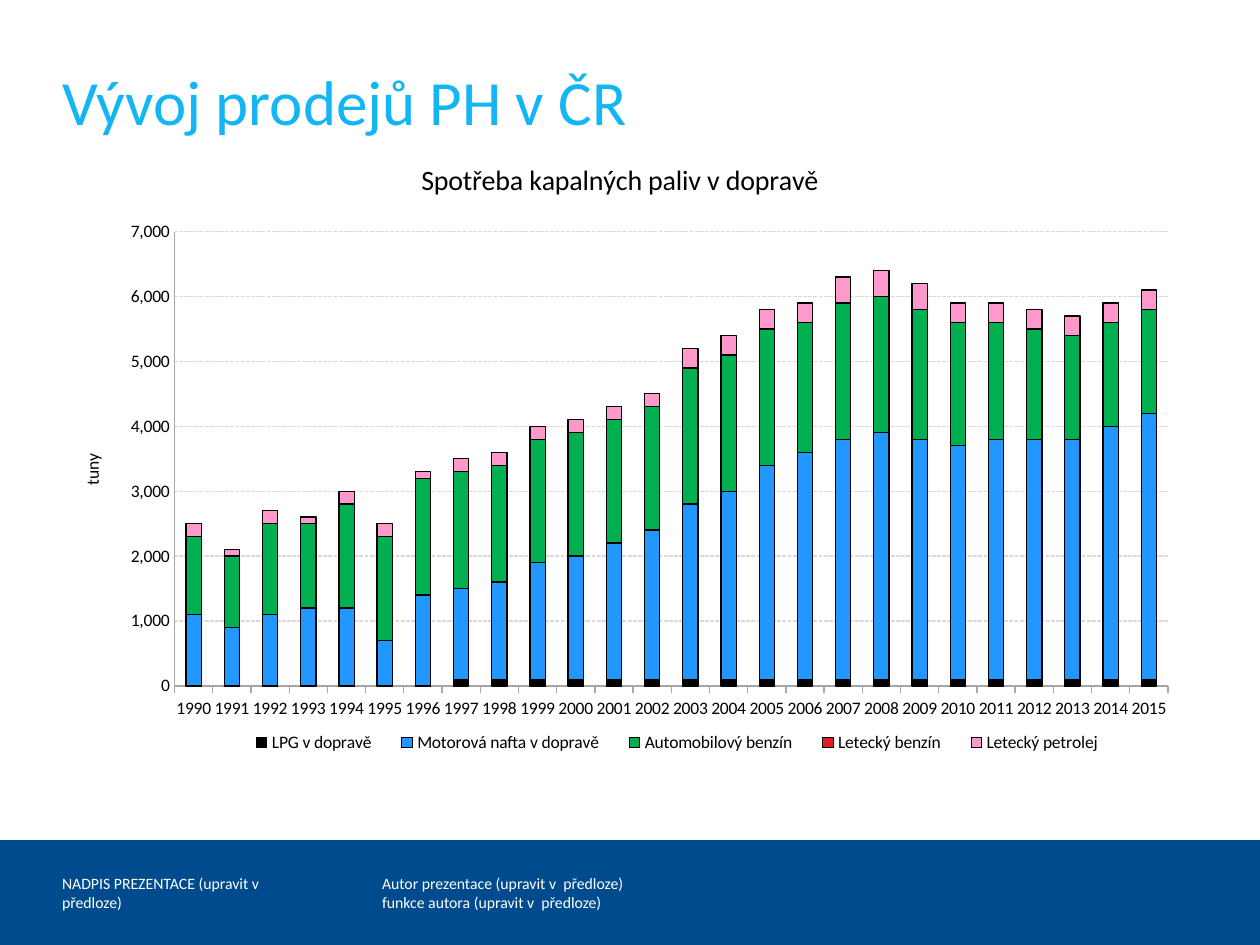
from lxml import etree
from pptx import Presentation
from pptx.chart.data import CategoryChartData
from pptx.dml.color import RGBColor
from pptx.enum.chart import XL_CHART_TYPE, XL_LEGEND_POSITION, XL_TICK_LABEL_POSITION, XL_TICK_MARK
from pptx.enum.dml import MSO_LINE
from pptx.enum.shapes import MSO_SHAPE
from pptx.enum.text import MSO_ANCHOR, MSO_AUTO_SIZE, PP_ALIGN
from pptx.oxml.ns import qn
from pptx.util import Emu, Pt

SCALE = 914400 / 126
FONT = "Calibri"
TITLE_ONLY = 5
STACKED = XL_CHART_TYPE.COLUMN_STACKED
BOTTOM = XL_LEGEND_POSITION.BOTTOM
LOW = XL_TICK_LABEL_POSITION.LOW
TICK_OUTSIDE = XL_TICK_MARK.OUTSIDE
TICK_NONE = XL_TICK_MARK.NONE
DASHED = MSO_LINE.SQUARE_DOT
RECTANGLE = MSO_SHAPE.RECTANGLE
TOP, MIDDLE = MSO_ANCHOR.TOP, MSO_ANCHOR.MIDDLE
NO_AUTOFIT = MSO_AUTO_SIZE.NONE
LEFT = PP_ALIGN.LEFT

WHITE = RGBColor(0xFF, 0xFF, 0xFF)
BLACK = RGBColor(0x00, 0x00, 0x00)
NAVY = RGBColor(0x00, 0x4B, 0x8D)
SKY = RGBColor(0x13, 0xB5, 0xF4)
BLUE = RGBColor(0x22, 0x97, 0xFF)
GREEN = RGBColor(0x00, 0xB0, 0x50)
RED = RGBColor(0xE3, 0x1B, 0x23)
PINK = RGBColor(0xFF, 0x99, 0xCC)
AXIS_GRAY = RGBColor(0xA6, 0xA6, 0xA6)
GRID_GRAY = RGBColor(0xD9, 0xD9, 0xD9)

YEARS = range(1990, 2016)
FUELS = [
    ("LPG v dopravě", BLACK, [0] * 7 + [100] * 19),
    ("Motorová nafta v dopravě", BLUE,
     [1100, 900, 1100, 1200, 1200, 700, 1400, 1400, 1500, 1800, 1900, 2100, 2300,
      2700, 2900, 3300, 3500, 3700, 3800, 3700, 3600, 3700, 3700, 3700, 3900, 4100]),
    ("Automobilový benzín", GREEN,
     [1200, 1100, 1400, 1300, 1600, 1600, 1800, 1800, 1800, 1900, 1900, 1900, 1900,
      2100, 2100, 2100, 2000, 2100, 2100, 2000, 1900, 1800, 1700, 1600, 1600, 1600]),
    ("Letecký benzín", RED, [0] * 26),
    ("Letecký petrolej", PINK,
     [200, 100, 200, 100, 200, 200, 100, 200, 200, 200, 200, 200, 200,
      300, 300, 300, 300, 400, 400, 400, 300, 300, 300, 300, 300, 300]),
]


def px(length):
    return Emu(round(length * SCALE))


def box(left, top, width, height):
    return px(left), px(top), px(width), px(height)


def format_font(font, size, color):
    font.name = FONT
    font.size = Pt(size)
    font.bold = False
    font.color.rgb = color


def write_text(text_frame, text, size=10, color=BLACK, anchor=None, align=None):
    if anchor is not None:
        text_frame.word_wrap = True
        text_frame.auto_size = NO_AUTOFIT
        text_frame.vertical_anchor = anchor
        text_frame.margin_left = text_frame.margin_right = 0
        text_frame.margin_top = text_frame.margin_bottom = 0
    for index, line in enumerate(text.split("\n")):
        paragraph = text_frame.paragraphs[0] if index == 0 else text_frame.add_paragraph()
        paragraph.alignment = align
        run = paragraph.add_run()
        run.text = line
        format_font(run.font, size, color)


def add_title(slide, text):
    title = slide.shapes.title
    title.left, title.top, title.width, title.height = box(62, 62, 1135, 77)
    write_text(title.text_frame, text, size=36, color=SKY, anchor=TOP, align=LEFT)


def add_panel(slide):
    panel = slide.shapes.add_shape(RECTANGLE, *box(0, 0, 1260, 840))
    panel.shadow.inherit = False
    panel.fill.solid()
    panel.fill.fore_color.rgb = WHITE
    panel.line.fill.background()
    slide.shapes._spTree.insert(2, panel._element)


def add_footer(slide, text, left, width):
    footer = slide.shapes.add_textbox(*box(left, 840, width, 105))
    write_text(footer.text_frame, text, size=9, color=WHITE, anchor=MIDDLE, align=LEFT)


def format_line(line, color):
    line.color.rgb = color
    line.width = Pt(0.75)


def set_layout(element, x, y, width, height, inner=False):
    layout = element.find(qn("c:layout"))
    if layout is None:
        layout = element.get_or_add_layout()
    manual = etree.SubElement(layout, qn("c:manualLayout"))
    settings = [("layoutTarget", "inner")] if inner else []
    settings += [("xMode", "edge"), ("yMode", "edge"),
                 ("x", x), ("y", y), ("w", width), ("h", height)]
    for tag, value in settings:
        etree.SubElement(manual, qn("c:" + tag)).set("val", str(value))


def format_axis(axis, tick):
    axis.major_tick_mark = tick
    axis.minor_tick_mark = TICK_NONE
    format_font(axis.tick_labels.font, 10, BLACK)
    format_line(axis.format.line, AXIS_GRAY)


def format_value_axis(axis):
    format_axis(axis, TICK_NONE)
    axis.minimum_scale, axis.maximum_scale, axis.major_unit = 0, 7000, 1000
    axis.tick_labels.number_format = "#,##0"
    axis.tick_labels.number_format_is_linked = False
    grid_line = axis.major_gridlines.format.line
    format_line(grid_line, GRID_GRAY)
    grid_line.dash_style = DASHED
    write_text(axis.axis_title.text_frame, "tuny")


def add_fuel_chart(slide):
    data = CategoryChartData(number_format="#,##0")
    data.categories = [str(year) for year in YEARS]
    for name, _, values in FUELS:
        data.add_series(name, values)
    chart = slide.shapes.add_chart(STACKED, *box(49, 137, 1142, 631), data).chart
    format_font(chart.font, 10, BLACK)
    chart.has_title = True
    write_text(chart.chart_title.text_frame, "Spotřeba kapalných paliv v dopravě", size=16)

    plot = chart.plots[0]
    plot.gap_width, plot.overlap = 150, 100
    plot.vary_by_categories = False
    for series, (_, color, _) in zip(plot.series, FUELS):
        series.format.fill.solid()
        series.format.fill.fore_color.rgb = color
        format_line(series.format.line, BLACK)

    format_axis(chart.category_axis, TICK_OUTSIDE)
    chart.category_axis.tick_label_position = LOW
    format_value_axis(chart.value_axis)

    chart.has_legend = True
    chart.legend.position = BOTTOM
    chart.legend.include_in_layout = False
    format_font(chart.legend.font, 10, BLACK)
    plot_area = chart._chartSpace.chart.plotArea
    if plot_area.find(qn("c:layout")) is None:
        plot_area.insert(0, etree.Element(qn("c:layout")))
    set_layout(plot_area, 0.11, 0.15, 0.87, 0.72, inner=True)
    legend = chart.legend._element
    if legend.find(qn("c:layout")) is None:
        legend.find(qn("c:legendPos")).addnext(etree.Element(qn("c:layout")))
    set_layout(legend, 0.16, 0.93, 0.78, 0.06)


def main():
    presentation = Presentation()
    presentation.slide_width, presentation.slide_height = px(1260), px(945)
    slide = presentation.slides.add_slide(presentation.slide_layouts[TITLE_ONLY])
    slide.background.fill.solid()
    slide.background.fill.fore_color.rgb = NAVY
    add_panel(slide)
    add_footer(slide, "Autor prezentace (upravit v  předloze)\nfunkce autora (upravit v  předloze)", 382, 248)
    add_footer(slide, "NADPIS PREZENTACE (upravit v  předloze)", 62, 258)
    add_title(slide, "Vývoj prodejů PH v ČR")
    add_fuel_chart(slide)
    presentation.save("out.pptx")


if __name__ == "__main__":
    main()
